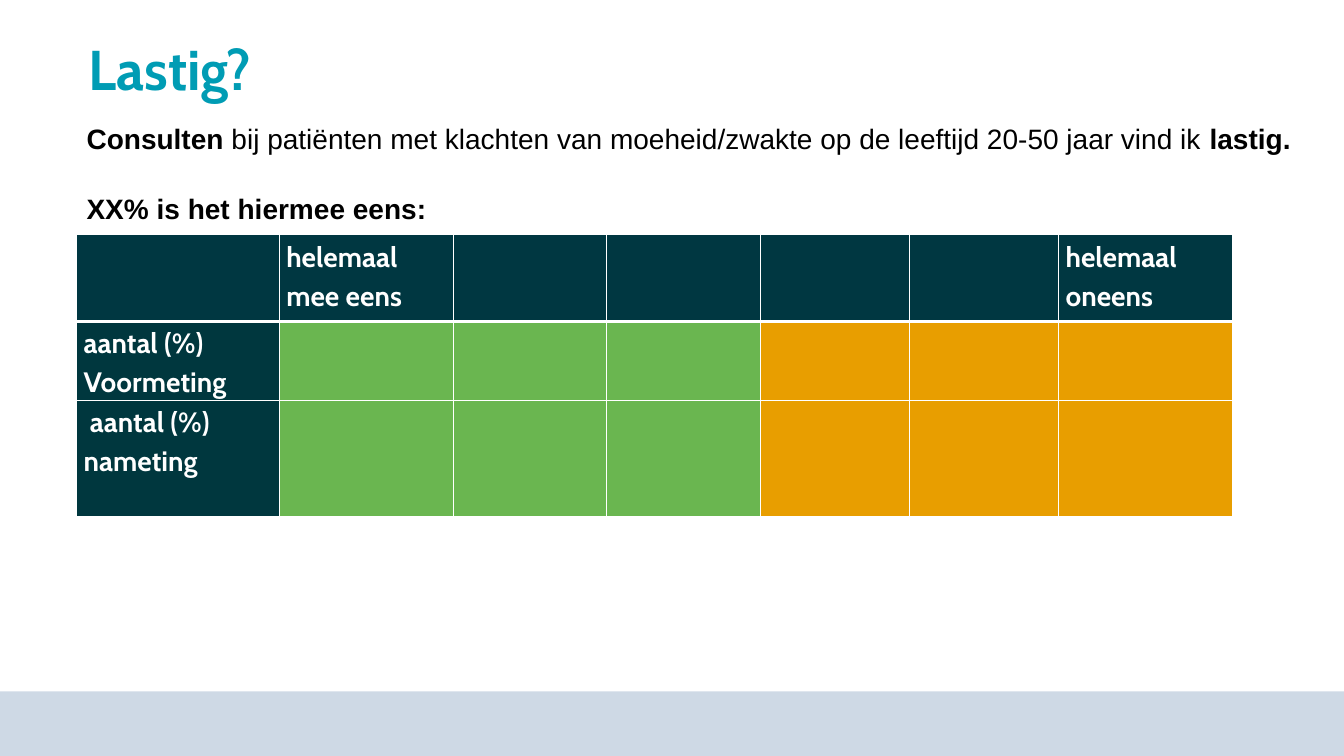
import pptx
import pptx.dml.color
import pptx.enum.shapes
import pptx.enum.text
import pptx.oxml
import pptx.oxml.ns
import pptx.util

Inches = pptx.util.Inches
Pt = pptx.util.Pt
MIDDLE = pptx.enum.text.MSO_ANCHOR.MIDDLE
TOP = pptx.enum.text.MSO_ANCHOR.TOP

COLORS = {
    "footer": "CED9E5",
    "title": "009CB4",
    "text": "000000",
    "white": "FFFFFF",
    "header": "003741",
    "label": "00373E",
    "agree": "6AB650",
    "disagree": "E89E00",
}
COLUMN_WIDTHS = [2.01, 1.73, 1.52, 1.52, 1.48, 1.48, 1.73]
ROW_HEIGHTS = [0.86, 0.78, 1.16]
CELL_TEXTS = {
    (0, 1): "helemaal mee eens",
    (0, 6): "helemaal oneens",
    (1, 0): "aantal (%)\nVoormeting",
    (2, 0): "\u00a0aantal (%)\nnameting".replace("\u00a0", " "),
}


def rgb(name):
    return pptx.dml.color.RGBColor.from_string(COLORS[name])


def style_span(span, font, size, color, bold=True):
    span.font.name = font
    span.font.size = Pt(size)
    span.font.bold = bold
    span.font.color.rgb = rgb(color)


def add_band(page, left, top, width, height, color):
    band = page.shapes.add_shape(
        pptx.enum.shapes.MSO_SHAPE.RECTANGLE,
        Inches(left), Inches(top), Inches(width), Inches(height))
    band.shadow.inherit = False
    band.fill.solid()
    band.fill.fore_color.rgb = rgb(color)
    band.line.fill.background()


def add_text(page, left, top, width, height, paragraphs, font, size, color,
             anchor=TOP, line_spacing=1.0, gap=0):
    """Each paragraph is a list of (text, bold) pairs."""
    box = page.shapes.add_textbox(
        Inches(left), Inches(top), Inches(width), Inches(height))
    frame = box.text_frame
    frame.word_wrap = True
    frame.vertical_anchor = anchor
    for index, spans in enumerate(paragraphs):
        para = frame.add_paragraph() if index else frame.paragraphs[0]
        para.line_spacing = line_spacing
        if index:
            para.space_before = Pt(gap)
        for text, bold in spans:
            span = para.add_run()
            span.text = text
            style_span(span, font, size, color, bold)
    return box


def set_borders(cell, bottom_width):
    properties = cell._tc.get_or_add_tcPr()
    widths = {"lnL": 1, "lnR": 1, "lnT": 1, "lnB": bottom_width}
    for side, width in widths.items():
        properties.append(pptx.oxml.parse_xml(
            f'<a:{side} {pptx.oxml.ns.nsdecls("a")} w="{Pt(width)}">'
            f'<a:solidFill><a:srgbClr val="{COLORS["white"]}"/></a:solidFill>'
            f'</a:{side}>'))


def cell_color(row, column):
    if row == 0:
        return "header"
    if column == 0:
        return "label"
    return "agree" if column <= 3 else "disagree"


def fill_cell(cell, row, column):
    set_borders(cell, 3 if row == 0 else 1)
    cell.fill.solid()
    cell.fill.fore_color.rgb = rgb(cell_color(row, column))
    cell.margin_left = cell.margin_right = Inches(0.07)
    cell.margin_top = cell.margin_bottom = 0
    cell.text_frame.text = CELL_TEXTS.get((row, column), "")
    for para in cell.text_frame.paragraphs:
        para.line_spacing = 1.15
        for span in para.runs:
            style_span(span, "Cabin", 20, "white")


def add_scale_table(page, left, top):
    table = page.shapes.add_table(
        len(ROW_HEIGHTS), len(COLUMN_WIDTHS), Inches(left), Inches(top),
        Inches(sum(COLUMN_WIDTHS)), Inches(sum(ROW_HEIGHTS))).table
    table.horz_banding = False
    for column, width in enumerate(COLUMN_WIDTHS):
        table.columns[column].width = Inches(width)
    for row, height in enumerate(ROW_HEIGHTS):
        table.rows[row].height = Inches(height)
        for column in range(len(COLUMN_WIDTHS)):
            fill_cell(table.cell(row, column), row, column)


def main():
    deck = pptx.Presentation()
    deck.slide_width = Inches(13.33)
    deck.slide_height = Inches(7.5)
    page = deck.slides.add_slide(deck.slide_layouts[6])

    # Footer band and title
    add_band(page, 0, 6.86, 13.33, 0.64, "footer")
    add_text(page, 0.78, 0.36, 10.68, 0.71, [[("Lastig?", True)]],
             "Cabin", 40, "title", MIDDLE, 0.9)

    # Answer scale
    add_scale_table(page, 0.76, 2.33)

    # Statement above the scale
    statement = [
        [("Consulten", True),
         (" bij patiënten met klachten van moeheid/zwakte op de leeftijd "
          "20-50 jaar vind ik ", False),
         ("lastig.", True)],
        [("XX% is het hiermee eens:", True)],
    ]
    box = add_text(page, 0.76, 0.8, 12.15, 1.75, statement,
                   "Arial", 20, "text", gap=25.5)
    box.text_frame.margin_top = Inches(0.41)
    box.text_frame.margin_right = 0

    deck.save("out.pptx")


if __name__ == "__main__":
    main()
